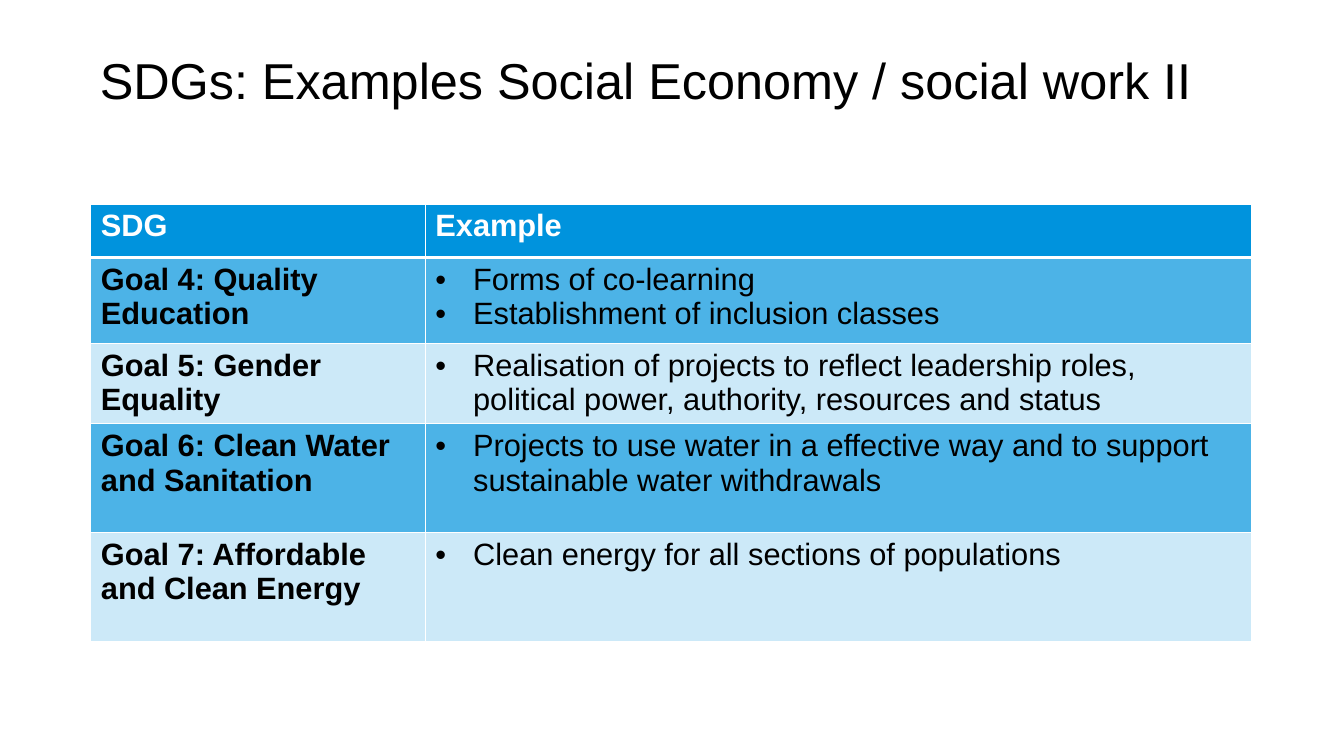
"""Build a slide with a table of sustainable development goals and examples."""
from lxml.etree import SubElement
from pptx import Presentation
from pptx.dml.color import RGBColor
from pptx.enum.text import MSO_ANCHOR as Anchor, PP_ALIGN as Align
from pptx.oxml.ns import qn
from pptx.util import Cm, Pt

BLACK = RGBColor(0x00, 0x00, 0x00)
WHITE = RGBColor(0xFF, 0xFF, 0xFF)
BLUE = RGBColor(0x00, 0x93, 0xDD)

TITLE = "SDGs: Examples Social Economy / social work II"
HEADINGS = ("SDG", "Example")
GOALS = [
    ("Goal 4: Quality Education",
     ["Forms of co-learning", "Establishment of inclusion classes"]),
    ("Goal 5: Gender Equality",
     ["Realisation of projects to reflect leadership roles, "
      "political power, authority, resources and status"]),
    ("Goal 6: Clean Water and Sanitation",
     ["Projects to use water in a effective way and to support "
      "sustainable water withdrawals"]),
    ("Goal 7: Affordable and Clean Energy",
     ["Clean energy for all sections of populations"]),
]
COLUMN_WIDTHS = (Cm(8.43), Cm(20.83))
ROW_HEIGHTS = (Cm(1.35), Cm(2.16), Cm(2.03), Cm(2.74), Cm(2.74))


def add_bullet(paragraph):
    properties = paragraph._p.get_or_add_pPr()
    properties.set("marL", str(Cm(0.95)))
    properties.set("indent", str(-Cm(0.95)))
    SubElement(properties, qn("a:buFont"), typeface="Arial")
    SubElement(properties, qn("a:buChar"), char="•")


def write_text(frame, lines, size=22, color=BLACK, bold=False, bullet=False,
               line_spacing=None):
    for index, line in enumerate(lines):
        paragraph = frame.add_paragraph() if index else frame.paragraphs[0]
        if bullet:
            add_bullet(paragraph)
        paragraph.alignment = Align.LEFT
        if line_spacing:
            paragraph.line_spacing = line_spacing
        run = paragraph.add_run()
        run.text = line
        run.font.name = "Arial"
        run.font.size = Pt(size)
        run.font.bold = bold
        run.font.color.rgb = color


def set_borders(cell, top=1, bottom=1):
    properties = cell._tc.get_or_add_tcPr()
    for side, width in (("L", 1), ("R", 1), ("T", top), ("B", bottom)):
        line = SubElement(properties, qn(f"a:ln{side}"), w=str(Pt(width)))
        fill = SubElement(line, qn("a:solidFill"))
        SubElement(fill, qn("a:srgbClr"), val=str(WHITE))


def fill_cell(cell, opacity):
    cell.fill.solid()
    cell.fill.fore_color.rgb = BLUE
    if opacity < 100:
        color = cell._tc.tcPr.find(qn("a:solidFill")).find(qn("a:srgbClr"))
        SubElement(color, qn("a:alpha"), val=str(opacity * 1000))


def add_title(slide):
    title = slide.shapes.title
    title.left, title.top = Cm(2.26), Cm(1.02)
    title.width, title.height = Cm(28.27), Cm(3.68)
    frame = title.text_frame
    frame.word_wrap = True
    frame.vertical_anchor = Anchor.TOP
    frame.margin_top = Cm(0.38)
    write_text(frame, [TITLE], size=36, line_spacing=0.9)


def add_goal_table(slide):
    shape = slide.shapes.add_table(
        len(ROW_HEIGHTS), len(COLUMN_WIDTHS), Cm(2.29), Cm(5.14),
        sum(COLUMN_WIDTHS), sum(ROW_HEIGHTS))
    table = shape.table
    for column, width in zip(table.columns, COLUMN_WIDTHS):
        column.width = width
    for row, height in zip(table.rows, ROW_HEIGHTS):
        row.height = height

    for column, heading in enumerate(HEADINGS):
        cell = table.cell(0, column)
        set_borders(cell, bottom=3)
        fill_cell(cell, 100)
        write_text(cell.text_frame, [heading], color=WHITE, bold=True)

    for row, (goal, examples) in enumerate(GOALS, start=1):
        for column in range(len(HEADINGS)):
            cell = table.cell(row, column)
            set_borders(cell, top=3 if row == 1 else 1)
            fill_cell(cell, 70 if row % 2 else 20)
        write_text(table.cell(row, 0).text_frame, [goal], bold=True)
        write_text(table.cell(row, 1).text_frame, examples, bullet=True)


def main():
    presentation = Presentation()
    presentation.slide_width, presentation.slide_height = Cm(33.87), Cm(19.05)
    slide = presentation.slides.add_slide(presentation.slide_layouts[5])
    add_title(slide)
    add_goal_table(slide)
    presentation.save("out.pptx")


if __name__ == "__main__":
    main()
